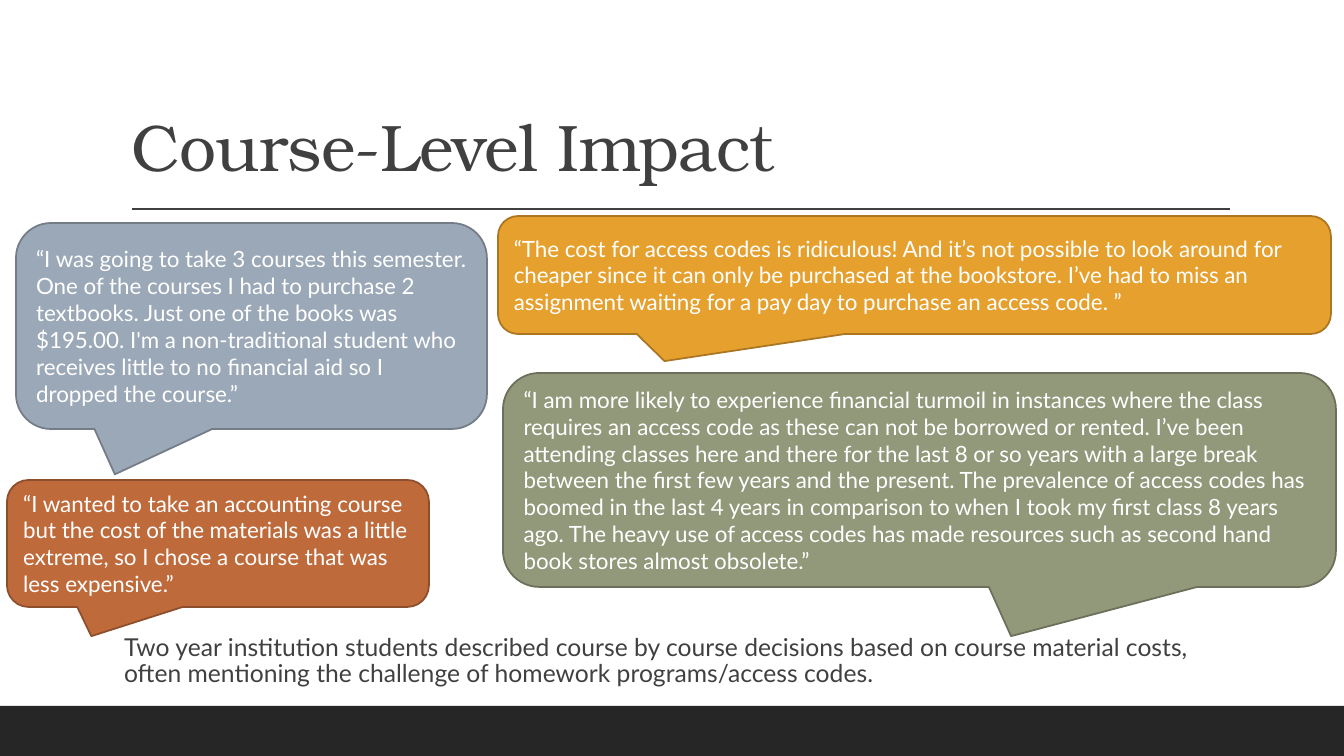
import pptx
import pptx.util
import pptx.dml.color
import pptx.enum.shapes
import pptx.enum.text
import pptx.oxml.ns
import lxml.etree

# Content: lengths in px, boxes as left, top, width, height
SLIDE = (1344, 756)
COLORS = {
    "ink": "404040", "bar": "262626", "white": "FFFFFF",
    "green": "92987A", "green edge": "6C705A",
    "blue": "9BA8B7", "blue edge": "737C87",
    "rust": "BF6A3B", "rust edge": "8D4E2C",
    "amber": "E6A02E", "amber edge": "AA7622",
}
HEADING = "Course-Level Impact"
HEADING_BOX = (121, 31, 1109, 160)
SUMMARY = ("Two year institution students described course by course decisions based on "
           "course material costs, often mentioning the challenge of homework programs/access codes.")
SUMMARY_BOX = (114, 630, 1109, 66)
FOOTER_BAR = (0, 706, 1344, 50)
RULE = (132, 209, 1230, 209)
QUOTES = [  # color, box, tail tip relative to the centre, words
    ("green", (503, 373, 833, 214), (0.11, 0.73),
     "“I am more likely to experience financial turmoil in instances where the class requires "
     "an access code as these can not be borrowed or rented. I’ve been attending classes here "
     "and there for the last 8 or so years with a large break between the first few years and "
     "the present. The prevalence of access codes has boomed in the last 4 years in comparison "
     "to when I took my first class 8 years ago. The heavy use of access codes has made "
     "resources such as second hand book stores almost obsolete.”"),
    ("blue", (16, 223, 471, 206), (-0.29, 0.72),
     "“I was going to take 3 courses this semester. One of the courses I had to purchase 2 "
     "textbooks. Just one of the books was $195.00. I'm a non-traditional student who receives "
     "little to no financial aid so I dropped the course.”"),
    ("rust", (7, 480, 422, 127), (-0.3, 0.73),
     "“I wanted to take an accounting course but the cost of the materials was a little "
     "extreme, so I chose a course that was less expensive.”"),
    ("amber", (498, 216, 833, 118), (-0.3, 0.73),
     "“The cost for access codes is ridiculous! And it’s not possible to look around for "
     "cheaper since it can only be purchased at the bookstore. I’ve had to miss an assignment "
     "waiting for a pay day to purchase an access code. ”"),
]
CORNER = 0.17
BODY_FONT, HEADING_FONT = "Lato", "TeX Gyre Bonum"
ANCHOR = pptx.enum.text.MSO_ANCHOR
PRESET = pptx.enum.shapes.MSO_SHAPE


def px(*lengths):
    return [round(length * 914400 / 100.8) for length in lengths]


def rgb(name):
    return pptx.dml.color.RGBColor.from_string(COLORS[name])


def apply(target, formats):
    for name, value in formats.items():
        setattr(target, name, value)


def write(holder, words, size, font, color, anchor, spacing=1.0, **insets):
    frame = holder.text_frame
    frame.text = words
    apply(frame, {"word_wrap": True, "vertical_anchor": anchor,
                  "auto_size": pptx.enum.text.MSO_AUTO_SIZE.NONE, **insets})
    paragraph = frame.paragraphs[0]
    apply(paragraph, {"alignment": pptx.enum.text.PP_ALIGN.LEFT, "line_spacing": spacing})
    run = paragraph.runs[0]
    apply(run.font, {"size": pptx.util.Pt(size), "name": font})
    run.font.color.rgb = rgb(color)
    return run


def add_filled(slide, preset, box, color):
    shape = slide.shapes.add_shape(preset, *px(*box))
    shape.shadow.inherit = False
    shape.fill.solid()
    shape.fill.fore_color.rgb = rgb(color)
    return shape


def main():
    deck = pptx.Presentation()
    deck.slide_width, deck.slide_height = px(*SLIDE)
    slide = deck.slides.add_slide(deck.slide_layouts.get_by_name("Title Only"))

    # Footer bar and rule under the heading
    bar = add_filled(slide, PRESET.RECTANGLE, FOOTER_BAR, "bar")
    bar.line.fill.background()
    rule = slide.shapes.add_connector(pptx.enum.shapes.MSO_CONNECTOR.STRAIGHT, *px(*RULE))
    rule.line.color.rgb = rgb("ink")
    rule.line.width = pptx.util.Pt(1)
    lxml.etree.SubElement(rule._element.spPr, pptx.oxml.ns.qn("a:effectLst"))

    # Heading
    heading = slide.shapes.title
    apply(heading, dict(zip(("left", "top", "width", "height"), px(*HEADING_BOX))))
    heading_run = write(heading, HEADING, 47, HEADING_FONT, "ink", ANCHOR.BOTTOM, 0.9)
    heading_run.font._element.set("spc", "-50")

    # Summary
    summary = slide.shapes.add_textbox(*px(*SUMMARY_BOX))
    write(summary, SUMMARY, 17.6, BODY_FONT, "ink", ANCHOR.TOP, 0.9,
          margin_left=px(10)[0], margin_right=0)

    # Student quotes
    for color, box, tip, words in QUOTES:
        callout = add_filled(slide, PRESET.ROUNDED_RECTANGULAR_CALLOUT, box, color)
        callout.line.color.rgb = rgb(color + " edge")
        callout.line.width = pptx.util.Pt(1.25)
        for index, value in enumerate((*tip, CORNER)):
            callout.adjustments[index] = value
        write(callout, words, 16, BODY_FONT, "white", ANCHOR.MIDDLE)

    deck.save("out.pptx")


if __name__ == "__main__":
    main()
